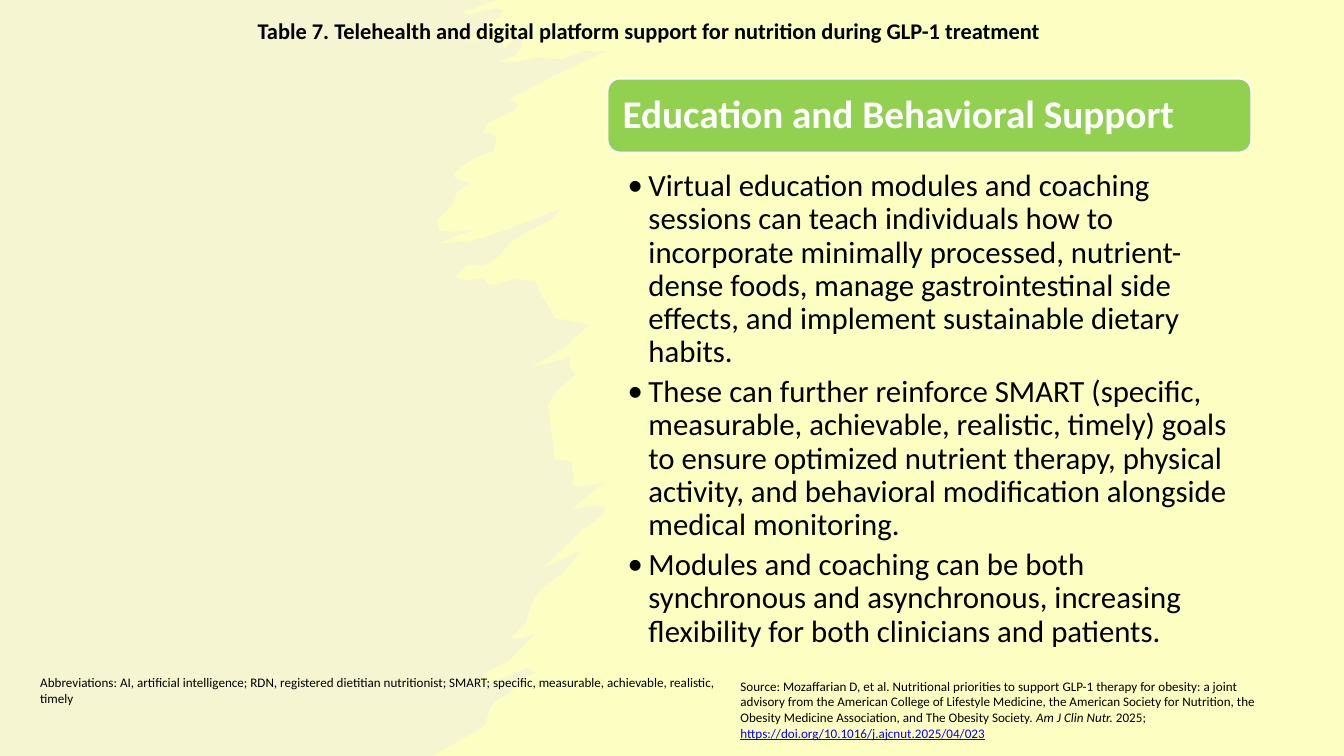
from lxml import etree
from pptx import Presentation
from pptx.dml.color import RGBColor
from pptx.enum.shapes import MSO_SHAPE
from pptx.enum.text import MSO_ANCHOR, PP_ALIGN
from pptx.oxml.ns import qn
from pptx.util import Pt

PX = 9144  # EMU per px, 100 px to the inch
FONT = "Calibri"
CREAM = RGBColor(0xFD, 0xFF, 0xC2)
BEIGE = RGBColor(0xEE, 0xEC, 0xE1)
GREEN = RGBColor(0x92, 0xD0, 0x50)
WHITE = RGBColor(0xFF, 0xFF, 0xFF)
BLACK = RGBColor(0, 0, 0)
BLUE = RGBColor(0, 0, 0xFF)
TOP, MIDDLE = MSO_ANCHOR.TOP, MSO_ANCHOR.MIDDLE
LEFT, CENTER = PP_ALIGN.LEFT, PP_ALIGN.CENTER


def setup_text(shape, box, insets=(10, 5, 10, 5), anchor=TOP):
    """Place a text shape and set its margins; return its text frame."""
    shape.left, shape.top, shape.width, shape.height = [v * PX for v in box]
    tf = shape.text_frame
    tf.word_wrap = True
    tf.vertical_anchor = anchor
    (tf.margin_left, tf.margin_top,
     tf.margin_right, tf.margin_bottom) = [v * PX for v in insets]
    return tf


def add_run(p, text, size, color=BLACK, bold=False, italic=False, underline=False):
    r = p.add_run()
    r.text = text
    f = r.font
    f.name, f.size, f.color.rgb = FONT, Pt(size), color
    f.bold, f.italic, f.underline = bold, italic, underline


prs = Presentation()
prs.slide_width, prs.slide_height = 2000 * PX, 1125 * PX
s = prs.slides.add_slide(prs.slide_layouts[5])
s.background.fill.solid()
s.background.fill.fore_color.rgb = CREAM

# Brush-stroke panel on the left: ragged edge from top to bottom
BRUSH_EDGE = [
    (739, 0), (689, 18), (696, 22), (739, 12), (748, 15), (743, 27), (725, 32),
    (696, 61), (740, 58), (747, 65), (750, 74), (763, 59), (774, 55), (777, 68),
    (767, 83), (741, 92), (769, 92), (802, 86), (837, 88), (870, 76), (903, 76),
    (825, 113), (755, 149), (763, 151), (772, 156), (765, 165), (726, 183),
    (717, 200), (729, 198), (739, 202), (735, 224), (708, 234), (680, 253),
    (675, 262), (682, 268), (700, 272), (680, 285), (675, 303), (666, 312),
    (650, 326), (653, 343), (671, 345), (709, 341), (680, 351), (653, 362),
    (700, 359), (745, 345), (835, 310), (824, 324), (760, 359), (742, 382),
    (722, 394), (696, 394), (677, 413), (696, 417), (719, 414), (728, 425),
    (745, 421), (769, 415), (797, 419), (806, 442), (809, 443), (825, 473),
    (862, 480), (877, 483), (840, 517), (790, 546), (820, 540), (848, 530),
    (846, 545), (857, 557), (829, 581), (815, 602), (819, 628), (824, 671),
    (824, 684), (836, 684), (851, 687), (853, 709), (852, 722), (863, 724),
    (900, 718), (880, 733), (851, 757), (890, 752), (903, 755), (896, 767),
    (867, 788), (807, 846), (865, 819), (840, 851), (804, 878), (791, 898),
    (782, 928), (763, 946), (764, 952), (796, 944), (755, 985), (728, 997),
    (712, 1016), (743, 1012), (784, 994), (798, 1001), (779, 1010), (759, 1030),
    (737, 1044), (728, 1055), (722, 1080), (702, 1092), (643, 1125),
]
fb = s.shapes.build_freeform(0, 0, scale=PX)
fb.add_line_segments(BRUSH_EDGE + [(0, 1125)], close=True)
brush = fb.convert_to_shape()
brush.shadow.inherit = False
brush.fill.solid()
brush.fill.fore_color.rgb = BEIGE
brush.line.fill.background()
clr = brush.fill._xPr.find(qn("a:solidFill"))[0]
etree.SubElement(clr, qn("a:alpha")).set("val", "50000")

# Title, brought in front of the brush panel
title = s.shapes.title
brush._element.addnext(title._element)
tf = setup_text(title, (53, 21, 1825, 50))
p = tf.paragraphs[0]
p.alignment = CENTER
add_run(p, "Table 7. Telehealth and digital platform support for nutrition "
           "during GLP-1 treatment", 24, bold=True)

# Footnotes
SOURCE = [
    ("Source: Mozaffarian D, et al. Nutritional priorities to support GLP-1 therapy "
     "for obesity: a joint advisory from the American College of Lifestyle Medicine, "
     "the American Society for Nutrition, the Obesity Medicine Association, and "
     "The Obesity Society. ", {}),
    ("Am J Clin Nutr. ", {"italic": True}),
    ("2025; ", {}),
    ("https://doi.org/10.1016/j.ajcnut.2025/04/023", {"color": BLUE, "underline": True}),
]
ABBREVIATIONS = [
    ("Abbreviations: AI, artificial intelligence; RDN, registered dietitian "
     "nutritionist; SMART; specific, measurable, achievable, realistic, timely", {}),
]
for box, runs in [((1092, 1004, 830, 104), SOURCE),
                  ((50, 999, 1025, 57), ABBREVIATIONS)]:
    tf = setup_text(s.shapes.add_textbox(0, 0, 0, 0), box)
    p = tf.paragraphs[0]
    p.space_after = Pt(6)
    for text, style in runs:
        add_run(p, text, 14, **style)

# Heading bar
bar = s.shapes.add_shape(MSO_SHAPE.ROUNDED_RECTANGLE, 0, 0, 0, 0)
bar.shadow.inherit = False
bar.fill.solid()
bar.fill.fore_color.rgb = GREEN
bar.line.color.rgb = WHITE
bar.line.width = Pt(2)
tf = setup_text(bar, (904, 117, 958, 110), (17, 17, 17, 17), MIDDLE)
p = tf.paragraphs[0]
p.alignment = LEFT
p.line_spacing = 0.9
add_run(p, "Education and Behavioral Support", 42, WHITE, bold=True)

# Bulleted list
BULLETS = [
    "Virtual education modules and coaching sessions can teach individuals how to "
    "incorporate minimally processed, nutrient-dense foods, manage gastrointestinal "
    "side effects, and implement sustainable dietary habits.",
    "These can further reinforce SMART (specific, measurable, achievable, realistic, "
    "timely) goals to ensure optimized nutrient therapy, physical activity, and "
    "behavioral modification alongside medical monitoring.",
    "Modules and coaching can be both synchronous and asynchronous, increasing "
    "flexibility for both clinicians and patients.",
]
tf = setup_text(s.shapes.add_textbox(0, 0, 0, 0), (904, 247, 958, 742), (30, 6, 33, 6))
for i, text in enumerate(BULLETS):
    p = tf.add_paragraph() if i else tf.paragraphs[0]
    p.level = 1
    p.line_spacing = 0.9
    p.space_after = Pt(7)
    pPr = p._p.get_or_add_pPr()
    pPr.set("marL", str(31 * PX))
    pPr.set("indent", str(-31 * PX))
    etree.SubElement(pPr, qn("a:buFont")).set("typeface", FONT)
    etree.SubElement(pPr, qn("a:buChar")).set("char", "•")
    add_run(p, text, 33)

prs.save("out.pptx")
